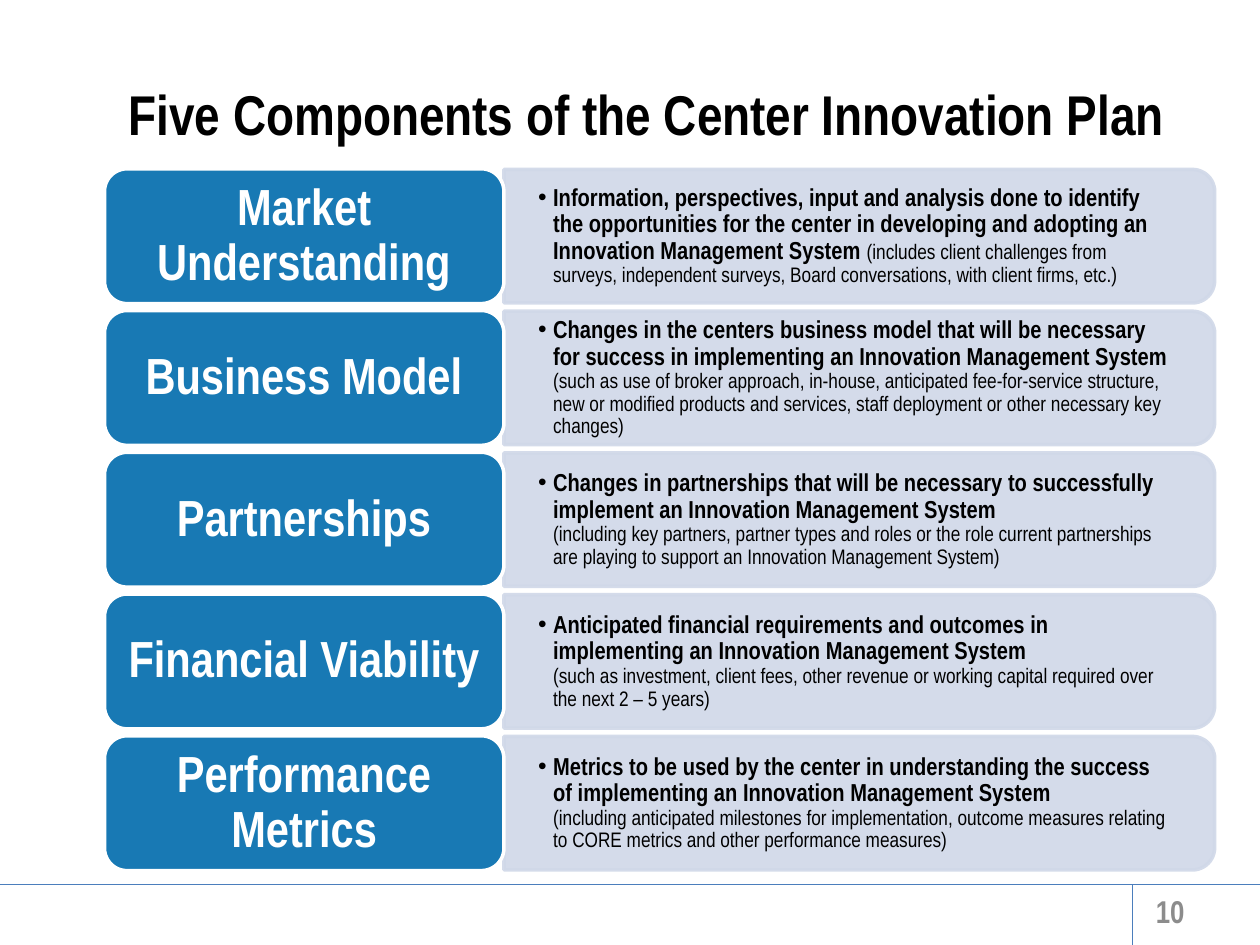
from lxml import etree
from pptx import Presentation
from pptx.dml.color import RGBColor
from pptx.enum import shapes, text
from pptx.oxml.ns import qn
from pptx.util import Inches, Pt

FONT = "Arial Narrow"
BLACK = RGBColor(0x00, 0x00, 0x00)
WHITE = RGBColor(0xFF, 0xFF, 0xFF)
BLUE = RGBColor(0x18, 0x79, 0xB4)
PALE = RGBColor(0xD0, 0xD8, 0xE8)
RULE = RGBColor(0x4B, 0x7E, 0xBC)
GRAY = RGBColor(0x8C, 0x8C, 0x8C)

ROW_TOP, ROW_STEP, ROW_HEIGHT = 1.34, 1.125, 1.07
LABEL_LEFT, LABEL_WIDTH = 0.83, 3.17
BAND_LEFT, BAND_WIDTH, BAND_HEIGHT = 4.0, 5.64, 1.06

# Label, description, whether the note starts on a forced new line, note
COMPONENTS = [
    ("Market Understanding",
     "Information, perspectives, input and analysis done to identify the opportunities "
     "for the center in developing and adopting an Innovation Management System ",
     False,
     "(includes client challenges from surveys, independent surveys, Board conversations, "
     "with client firms, etc.)"),
    ("Business Model",
     "Changes in the centers business model that will be necessary for success in "
     "implementing an Innovation Management System ",
     False,
     "(such as use of broker approach, in-house, anticipated fee-for-service structure, "
     "new or modified products and services, staff deployment or other necessary key changes)"),
    ("Partnerships",
     "Changes in partnerships that will be necessary to successfully implement an "
     "Innovation Management System ",
     True,
     "(including key partners, partner types and roles or the role current partnerships "
     "are playing to support an Innovation Management System)"),
    ("Financial Viability",
     "Anticipated financial requirements and outcomes in implementing an "
     "Innovation Management System ",
     True,
     "(such as investment, client fees, other revenue or working capital required over "
     "the next 2 – 5 years)"),
    ("Performance Metrics",
     "Metrics to be used by the center in understanding the success of implementing an "
     "Innovation Management System ",
     True,
     "(including anticipated milestones for implementation, outcome measures relating to "
     "CORE metrics and other performance measures)"),
]


def add_span(para, words, size, color, bold=True):
    span = para.add_run()
    span.text = words
    span.font.name = FONT
    span.font.size = Pt(size)
    span.font.bold = bold
    span.font.color.rgb = color


def set_frame(frame, side, end):
    """Wrap and centre the text vertically, with side and top/bottom insets."""
    frame.word_wrap = True
    frame.vertical_anchor = text.MSO_ANCHOR.MIDDLE
    frame.margin_left = frame.margin_right = Inches(side)
    frame.margin_top = frame.margin_bottom = Inches(end)
    return frame.paragraphs[0]


def add_panel(page, kind, left, top, width, height, fill, line):
    panel = page.shapes.add_shape(kind, Inches(left), Inches(top), Inches(width), Inches(height))
    panel.shadow.inherit = False
    panel.fill.solid()
    panel.fill.fore_color.rgb = fill
    panel.line.color.rgb = line
    panel.line.width = Pt(2)
    return panel


def add_band(page, middle):
    """Draw the pale band, a shape turned so its round corners face right."""
    left = BAND_LEFT + (BAND_WIDTH - BAND_HEIGHT) / 2
    band = add_panel(page, shapes.MSO_SHAPE.ROUND_2_SAME_RECTANGLE, left,
                     middle - BAND_WIDTH / 2, BAND_HEIGHT, BAND_WIDTH, PALE, PALE)
    band.rotation = 90
    for color in band.element.spPr.iter(qn("a:srgbClr")):
        etree.SubElement(color, qn("a:alpha"), val="90000")


def add_description(page, middle, description, breaks, note):
    box = page.shapes.add_textbox(Inches(BAND_LEFT), Inches(middle - 0.48),
                                  Inches(5.59), Inches(0.96))
    para = set_frame(box.text_frame, 0.27, 0.14)
    properties = para._p.get_or_add_pPr()
    properties.set("marL", str(Inches(0.12)))
    properties.set("indent", str(-Inches(0.12)))
    etree.SubElement(properties, qn("a:buFont"), typeface="Arial")
    etree.SubElement(properties, qn("a:buChar"), char="•")
    para.line_spacing = 0.9
    add_span(para, description, 14, BLACK)
    if breaks:
        para.add_line_break()
    add_span(para, note, 12, BLACK, bold=False)


def add_label(page, top, name):
    label = add_panel(page, shapes.MSO_SHAPE.ROUNDED_RECTANGLE, LABEL_LEFT, top,
                      LABEL_WIDTH, ROW_HEIGHT, BLUE, WHITE)
    para = set_frame(label.text_frame, 0.12, 0.06)
    para.alignment = text.PP_ALIGN.CENTER
    para.line_spacing = 0.9
    add_span(para, name, 29, WHITE)


def add_rule(page, x1, y1, x2, y2):
    rule = page.shapes.add_connector(shapes.MSO_CONNECTOR.STRAIGHT, Inches(x1), Inches(y1),
                                     Inches(x2), Inches(y2))
    rule.line.color.rgb = RULE
    rule.line.width = Pt(0.75)
    etree.SubElement(rule.element.spPr, qn("a:effectLst"))


def add_title(page, words):
    title = page.shapes.title
    title.left, title.top = Inches(0.92), Inches(0.58)
    title.width, title.height = Inches(8.83), Inches(0.94)
    para = set_frame(title.text_frame, 0.1, 0.05)
    title.text_frame.vertical_anchor = text.MSO_ANCHOR.TOP
    para.alignment = text.PP_ALIGN.LEFT
    add_span(para, words, 32, BLACK)


def add_page_number(page, number):
    box = page.shapes.add_textbox(Inches(7.17), Inches(7.11), Inches(2.33), Inches(0.24))
    para = set_frame(box.text_frame, 0.1, 0.05)
    para.alignment = text.PP_ALIGN.RIGHT
    add_span(para, number, 18, GRAY)


def main():
    deck = Presentation()
    deck.slide_width, deck.slide_height = Inches(10), Inches(7.5)
    page = deck.slides.add_slide(deck.slide_layouts[5])
    add_rule(page, 0, 7.02, 10, 7.02)
    add_rule(page, 8.99, 7.02, 8.99, 7.5)
    add_title(page, "Five Components of the Center Innovation Plan")
    for row, (name, description, breaks, note) in enumerate(COMPONENTS):
        top = ROW_TOP + row * ROW_STEP
        middle = top + ROW_HEIGHT / 2
        add_band(page, middle)
        add_description(page, middle, description, breaks, note)
        add_label(page, top, name)
    add_page_number(page, "10")
    deck.save("out.pptx")


if __name__ == "__main__":
    main()
